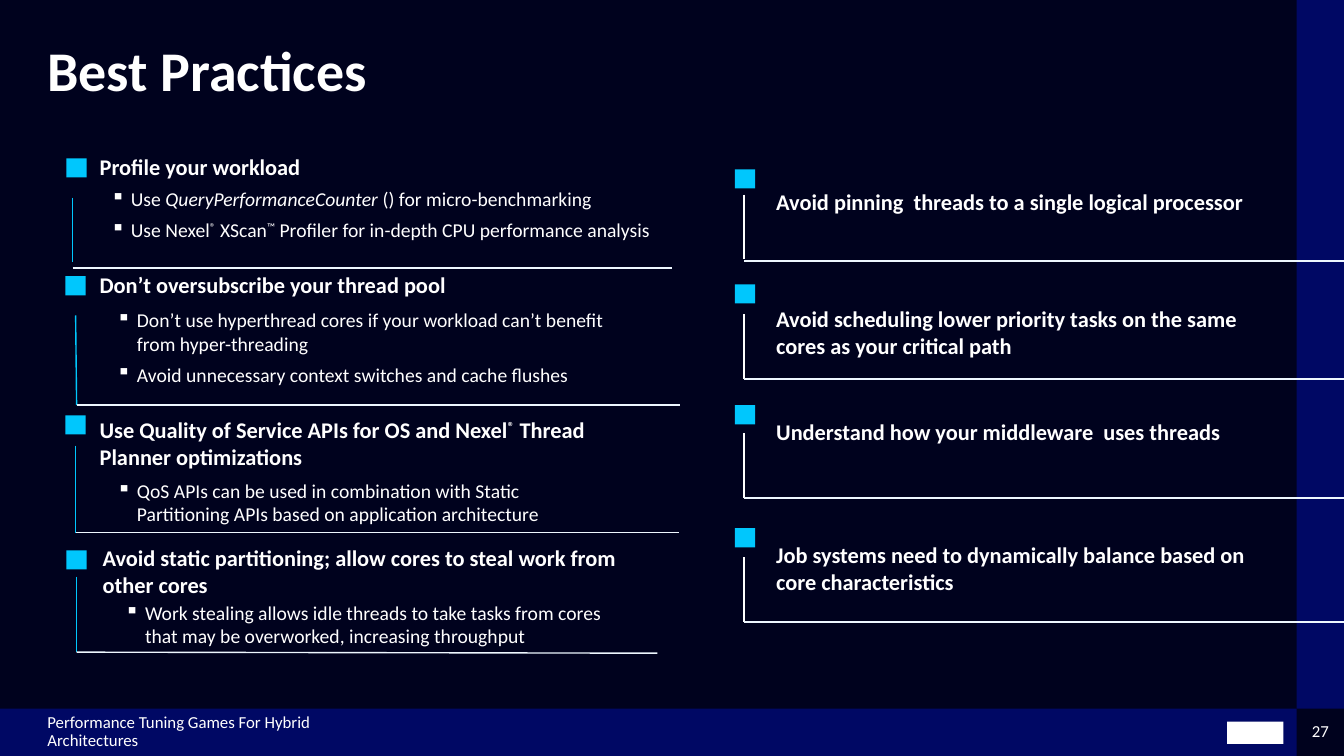
from dataclasses import dataclass

from lxml import etree
from pptx import Presentation
from pptx import util as u
from pptx.dml import color
from pptx.enum import shapes, text
from pptx.oxml import ns


@dataclass(frozen=True)
class Theme:
    font: str = "Calibri"
    back: str = "00021E"
    band: str = "000864"
    accent: str = "00C7FD"
    rule: str = "EEF7FF"
    white: str = "FFFFFF"
    title: int = 40
    head: int = 16
    body: int = 14
    foot: int = 12
    line: int = 1
    gap: int = 5


def rgb(value):
    return color.RGBColor.from_string(value)


def put(obj, values):
    for name, value in values.items():
        setattr(obj, name, value)


class SlideBuilder:
    def __init__(self, slide, theme):
        self.s, self.t = slide, theme
        fill = slide.background.fill
        fill.solid()
        fill.fore_color.rgb = rgb(theme.back)

    def rect(self, x, y, w, h, fill):
        sp = self.s.shapes.add_shape(
            shapes.MSO_SHAPE.RECTANGLE, *map(u.Inches, (x, y, w, h)))
        sp.shadow.inherit = False
        sp.fill.solid()
        sp.fill.fore_color.rgb = rgb(fill)
        sp.line.fill.background()

    def marker(self, x, y):
        self.rect(x, y, 0.2, 0.19, self.t.accent)

    def line(self, points, stroke):
        c = self.s.shapes.add_connector(
            shapes.MSO_CONNECTOR.STRAIGHT, *map(u.Inches, points))
        c.line.width = u.Pt(self.t.line)
        c.line.color.rgb = rgb(stroke)
        etree.SubElement(c._element.spPr, ns.qn("a:effectLst"))

    def bullet(self, p):
        pPr = p._p.get_or_add_pPr()
        put_in = {"marL": u.Inches(0.2), "indent": u.Inches(-0.2)}
        for name, value in put_in.items():
            pPr.set(name, str(int(value)))
        clr = etree.SubElement(pPr, ns.qn("a:buClr"))
        etree.SubElement(clr, ns.qn("a:srgbClr"), val=self.t.white)
        etree.SubElement(pPr, ns.qn("a:buChar"), char="▪")

    def text(self, box, paragraphs, size, bold=False, inset=(0.1, 0.05),
             bullets=False, frame=None, para=None):
        sp = self.s.shapes.add_textbox(*map(u.Inches, box))
        tf = sp.text_frame
        mx, my = map(u.Inches, inset)
        put(tf, {"word_wrap": True, "margin_left": mx, "margin_right": mx,
                 "margin_top": my, "margin_bottom": my, **(frame or {})})
        for i, runs in enumerate(paragraphs):
            p = tf.add_paragraph() if i else tf.paragraphs[0]
            put(p, para or {})
            if i:
                p.space_before = u.Pt(self.t.gap)
            if bullets:
                self.bullet(p)
            for run in runs:
                words, style = run if isinstance(run, tuple) else (run, "")
                r = p.add_run()
                r.text = words
                put(r.font, {"name": self.t.font, "size": u.Pt(size), "bold": bold,
                             "italic": style == "italic"})
                r.font.color.rgb = rgb(self.t.white)
                if style == "super":
                    r._r.get_or_add_rPr().set("baseline", "30000")

    def heading(self, box, runs):
        self.text(box, [runs], self.t.head, bold=True)

    def bullets(self, box, paragraphs):
        self.text(box, paragraphs, self.t.body, bullets=True)

    def footer(self, box, words, align):
        self.text(box, [[words]], self.t.foot, inset=(0, 0),
                  frame={"vertical_anchor": text.MSO_ANCHOR.MIDDLE},
                  para={"alignment": align, "line_spacing": 0.9})


REG = ("®", "super")
PRACTICES = [
    dict(marker=(0.66, 1.57), stem=(0.72, 1.96, 0.72, 2.6), base=(0.72, 2.66, 6.67, 2.66),
         head=(0.89, 1.47, 5.47, 0.37), title=["Profile your workload"],
         body=(1, 1.81, 5.95, 0.64),
         points=[["Use", (" QueryPerformanceCounter", "italic"), " () for micro-benchmarking"],
                 ["Use Nexel", REG, " XScan", ("™", "super"),
                  " Profiler for in-depth CPU performance analysis"]]),
    dict(marker=(0.65, 2.74), stem=(0.75, 3.13, 0.76, 4.02), base=(0.76, 4.02, 6.74, 4.02),
         head=(0.89, 2.64, 4.66, 0.37), title=["Don’t oversubscribe your thread pool"],
         body=(1.06, 3.01, 5.33, 0.88),
         points=[["Don’t use hyperthread cores if your workload can’t benefit "
                  "from hyper-threading"],
                 ["Avoid unnecessary context switches and cache flushes"]]),
    dict(marker=(0.65, 4.12), stem=(0.75, 4.42, 0.75, 5.29), base=(0.75, 5.28, 6.73, 5.28),
         head=(0.89, 4.08, 5.33, 0.64),
         title=["Use Quality of Service APIs for OS and Nexel", REG,
                " Thread Planner optimizations"],
         body=(1.06, 4.7, 5.08, 0.57),
         points=[["QoS APIs can be used in combination with Static Partitioning APIs "
                  "based on application architecture"]]),
    dict(marker=(0.66, 5.46), stem=(0.76, 5.72, 0.76, 6.47), base=(0.76, 6.47, 6.52, 6.48),
         head=(0.92, 5.35, 5.47, 0.64),
         title=["Avoid static partitioning; allow cores to steal work from other cores"],
         body=(1.14, 5.91, 5.08, 0.81),
         points=[["Work stealing allows idle threads to take tasks from cores "
                  "that may be overworked, increasing throughput"]]),
]
REMINDERS = [
    (1.68, 1.82, 4.91, 0.37, 1.93, 2.59,
     "Avoid pinning  threads to a single logical processor"),
    (2.82, 2.98, 4.91, 0.64, 3.12, 3.76,
     "Avoid scheduling lower priority tasks on the same cores as your critical path"),
    (4.02, 4.1, 4.65, 0.37, 4.3, 4.94,
     "Understand how your middleware  uses threads"),
    (5.24, 5.32, 5.03, 0.64, 5.53, 6.17,
     "Job systems need to dynamically balance based on core characteristics"),
]


def main():
    prs = Presentation()
    put(prs, {"slide_width": u.Inches(13.33), "slide_height": u.Inches(7.5)})
    t = Theme()
    b = SlideBuilder(prs.slides.add_slide(prs.slide_layouts[6]), t)

    b.rect(0, 7.03, 12.86, 0.47, t.band)
    b.rect(12.86, 0, 0.47, 7.03, t.band)
    b.rect(12.17, 7.16, 0.56, 0.22, t.white)
    b.text((0.47, 0.47, 11.91, 1.34), [["Best Practices"]], t.title, bold=True,
           inset=(0, 0), para={"line_spacing": 0.83})
    b.footer((0.47, 7.03, 3.52, 0.47),
             "Performance Tuning Games For Hybrid Architectures", text.PP_ALIGN.LEFT)
    b.footer((12.86, 7.03, 0.47, 0.47), "27", text.PP_ALIGN.CENTER)

    for item in PRACTICES:
        b.marker(*item["marker"])
        b.line(item["stem"], t.accent)
        b.line(item["base"], t.rule)
        b.heading(item["head"], item["title"])
        b.bullets(item["body"], item["points"])

    for marker_y, text_y, width, height, top, bottom, words in REMINDERS:
        b.marker(7.29, marker_y)
        b.line((7.38, top, 7.38, top + 0.64), t.white)
        b.line((7.38, bottom, 13.33, bottom), t.rule)
        b.heading((7.6, text_y, width, height), [words])

    prs.save("out.pptx")


if __name__ == "__main__":
    main()
